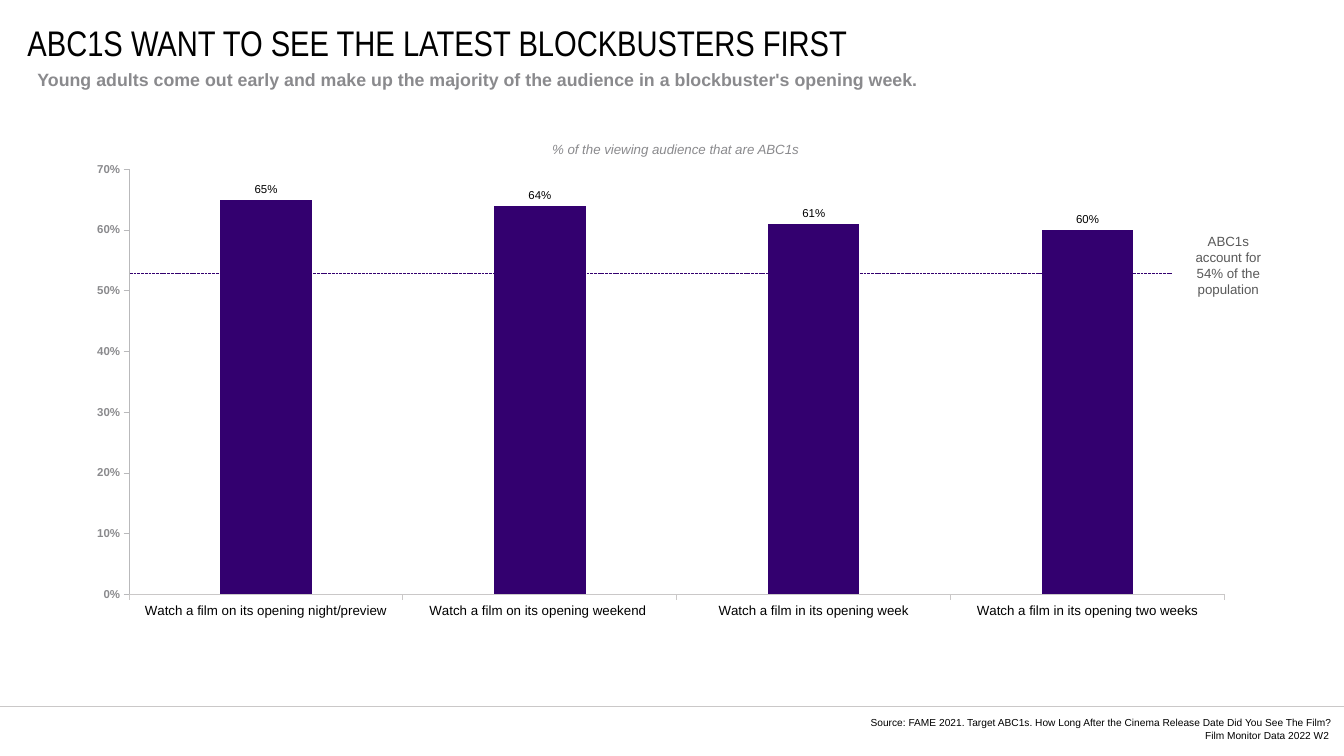
"""Build the slide on when ABC1 adults see a blockbuster."""
import pptx
import pptx.util
import pptx.chart.data
import pptx.dml.color
import pptx.enum.chart
import pptx.enum.dml
import pptx.enum.shapes
import pptx.enum.text
import pptx.oxml
import pptx.oxml.ns

COLS, ROWS, CELL = 147, 82.7, 0.1
BLACK, GREY, DARK, RULE, AXIS, BAR = "000000", "8A8A8D", "595959", "CAC8C8", "B9B9BB", "33006F"
LEFT, MID, RIGHT = (getattr(pptx.enum.text.PP_ALIGN, n) for n in ("LEFT", "CENTER", "RIGHT"))
TOP, HALF = pptx.enum.text.MSO_ANCHOR.TOP, pptx.enum.text.MSO_ANCHOR.MIDDLE
PAD, FLAT = (0.1, 0.05), (0, 0)

TEXTS = [
    dict(at=(3, 3, 135.8, 3.2), lines=["ABC1S WANT TO SEE THE LATEST BLOCKBUSTERS FIRST"],
         font=dict(size=28, name="Arial Narrow", color=BLACK),
         frame=dict(word_wrap=False, vertical_anchor=HALF), pad=FLAT, para=dict(alignment=LEFT)),
    dict(at=(3.1, 7.3, 138.2, 4.8),
         lines=["Young adults come out early and make up the majority of the audience "
                "in a blockbuster's opening week."],
         font=dict(size=14, color=GREY, bold=True), frame=dict(vertical_anchor=TOP), pad=PAD,
         para=dict(alignment=LEFT, line_spacing=pptx.util.Pt(15))),
    dict(at=(73.9, 78.4, 71.8, 2.7),
         lines=["Source: FAME 2021. Target ABC1s. How Long After the Cinema Release Date "
                "Did You See The Film?", "Film Monitor Data 2022 W2 "],
         font=dict(size=8, color=BLACK), frame=dict(vertical_anchor=HALF), pad=FLAT,
         para=dict(alignment=RIGHT)),
    dict(at=(128.8, 25, 11.1, 8.1), lines=["ABC1s account for 54% of the population"],
         font=dict(size=10.5, color=DARK), frame=dict(vertical_anchor=TOP), pad=PAD,
         para=dict(alignment=MID)),
    dict(at=(46.8, 15.1, 54.2, 4.8), lines=["% of the viewing audience that are ABC1s"],
         font=dict(size=10.5, color=GREY, italic=True), frame=dict(vertical_anchor=TOP), pad=FLAT,
         para=dict(alignment=MID, line_spacing=pptx.util.Pt(15))),
]
SHARES = {
    "Watch a film on its opening night/preview": 0.65,
    "Watch a film on its opening weekend ": 0.64,
    "Watch a film in its opening week": 0.61,
    "Watch a film in its opening two weeks": 0.6,
}
CHART = (5.4, 17.8, 130.1, 54.8)
PLOT = dict(x=0.067, y=0.013, w=0.921, h=0.849)
FOOT = dict(row=77.3, span=(0, COLS), color=RULE, width=0.5)
MEAN = dict(row=29.9, span=(14.2, 128.2), color=BAR, width=0.75,
            dash=pptx.enum.dml.MSO_LINE.SQUARE_DOT)


def grid(*cells):
    """Turn grid cells into lengths."""
    return [pptx.util.Inches(c * CELL) for c in cells]


def tint(code):
    """Turn a hex string into a colour."""
    return pptx.dml.color.RGBColor.from_string(code)


def apply(item, vals):
    """Set each attribute named in a dict."""
    for key, val in vals.items():
        setattr(item, key, val)


def style(font, size, color, name="Arial", **more):
    """Give a font its look."""
    apply(font, dict(size=pptx.util.Pt(size), name=name, **more))
    font.color.rgb = tint(color)


def stroke(line, color, width, dash=None):
    """Give a line its look."""
    line.color.rgb = tint(color)
    line.width = pptx.util.Pt(width)
    if dash:
        line.dash_style = dash


def rule(slide, row, span, **look):
    """Draw a level line on one row."""
    link = slide.shapes.add_connector(
        pptx.enum.shapes.MSO_CONNECTOR.STRAIGHT, *grid(span[0], row, span[1], row))
    stroke(link.line, **look)
    link._element.spPr.append(pptx.oxml.parse_xml(
        f"<a:effectLst {pptx.oxml.ns.nsdecls('a')}/>"))


def write(slide, at, lines, font, frame, pad, para):
    """Add a text box."""
    box = slide.shapes.add_textbox(*grid(*at)).text_frame
    side, edge = map(pptx.util.Inches, pad)
    apply(box, dict(word_wrap=True, margin_left=side, margin_right=side,
                    margin_top=edge, margin_bottom=edge) | frame)
    for num, line in enumerate(lines):
        part = box.add_paragraph() if num else box.paragraphs[0]
        apply(part, para)
        run = part.add_run()
        run.text = line
        style(run.font, **font)


def place(chart):
    """Fix the inner plot area."""
    area = chart._chartSpace.chart.plotArea
    for old in area.findall(pptx.oxml.ns.qn("c:layout")):
        area.remove(old)
    tags = [("layoutTarget", "inner"), ("xMode", "edge"), ("yMode", "edge"), *PLOT.items()]
    body = "".join(f'<c:{tag} val="{val}"/>' for tag, val in tags)
    area.insert(0, pptx.oxml.parse_xml(
        f"<c:layout {pptx.oxml.ns.nsdecls('c')}><c:manualLayout>{body}</c:manualLayout></c:layout>"))


def graph(slide):
    """Add the column chart."""
    data = pptx.chart.data.CategoryChartData(number_format="0%")
    data.categories = list(SHARES)
    data.add_series("Series 1", list(SHARES.values()))
    kinds = pptx.enum.chart
    chart = slide.shapes.add_chart(
        kinds.XL_CHART_TYPE.COLUMN_CLUSTERED, *grid(*CHART), data).chart
    apply(chart, dict(has_legend=False, has_title=False))
    style(chart.font, 10, BLACK)
    tick = dict(major_tick_mark=kinds.XL_TICK_MARK.OUTSIDE,
                minor_tick_mark=kinds.XL_TICK_MARK.NONE, has_major_gridlines=False)
    scale = dict(minimum_scale=0, maximum_scale=0.7, major_unit=0.1)
    axes = [
        (chart.category_axis, tick, dict(size=10.5, color=BLACK, bold=False), RULE),
        (chart.value_axis, tick | scale, dict(size=9, color=GREY, bold=True), AXIS),
    ]
    for axis, vals, font, color in axes:
        apply(axis, vals)
        style(axis.tick_labels.font, **font)
        stroke(axis.format.line, color, 0.75)
    form = dict(number_format="0%", number_format_is_linked=False)
    apply(chart.value_axis.tick_labels, form)
    plot = chart.plots[0]
    apply(plot, dict(gap_width=200, vary_by_categories=False, has_data_labels=True))
    apply(plot.data_labels, form | dict(
        show_value=True, position=kinds.XL_LABEL_POSITION.OUTSIDE_END))
    style(plot.data_labels.font, 9, BLACK)
    fill = plot.series[0].format.fill
    fill.solid()
    fill.fore_color.rgb = tint(BAR)
    place(chart)


def main():
    """Build and save the slide."""
    deck = pptx.Presentation()
    deck.slide_width, deck.slide_height = grid(COLS, ROWS)
    slide = deck.slides.add_slide(deck.slide_layouts[6])
    rule(slide, **FOOT)
    graph(slide)
    rule(slide, **MEAN)
    for text in TEXTS:
        write(slide, **text)
    deck.save("out.pptx")


if __name__ == "__main__":
    main()
